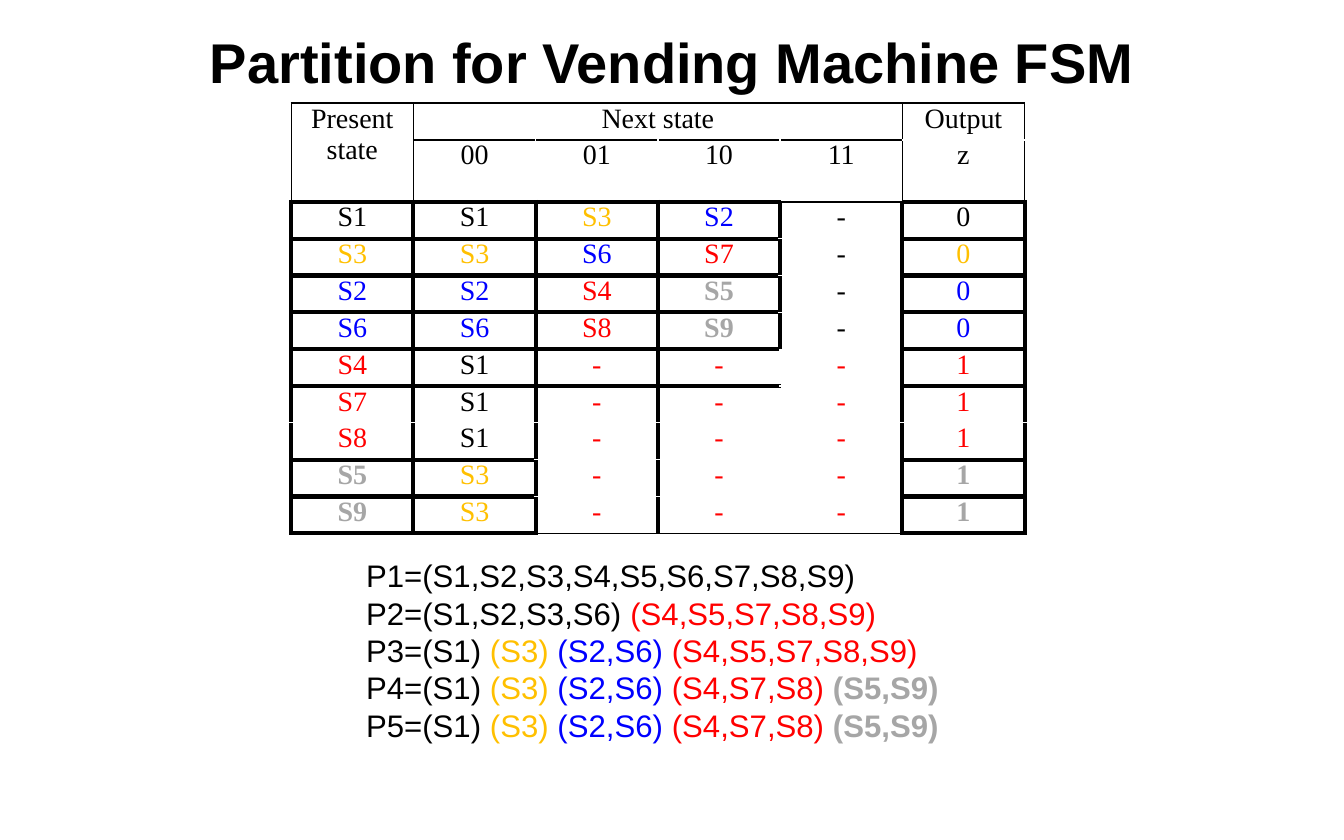
from dataclasses import dataclass

from lxml.etree import SubElement
from pptx import Presentation
from pptx.dml.color import RGBColor
from pptx.enum.text import MSO_ANCHOR, MSO_AUTO_SIZE, PP_ALIGN
from pptx.oxml.ns import qn
from pptx.util import Inches, Pt

BLACK = RGBColor(0x00, 0x00, 0x00)
WHITE = RGBColor(0xFF, 0xFF, 0xFF)
GOLD = RGBColor(0xFF, 0xC0, 0x00)
BLUE = RGBColor(0x00, 0x00, 0xFF)
RED = RGBColor(0xFF, 0x00, 0x00)
GREY = RGBColor(0xA6, 0xA6, 0xA6)

STATE_COLORS = {
    "S1": BLACK, "S3": GOLD, "S2": BLUE, "S6": BLUE, "S4": RED,
    "S7": RED, "S8": RED, "S5": GREY, "S9": GREY,
}


@dataclass(frozen=True)
class Border:
    color: RGBColor
    width: float


@dataclass(frozen=True)
class Transition:
    present: str
    next_states: tuple
    output: str


BORDERS = {"K": Border(BLACK, 3), "k": Border(BLACK, 1), "w": Border(WHITE, 1)}
HORIZONTAL_EDGES = (
    ["kkkkkk", "wkkkkw", "KKKKkK"] + ["KKKKwK"] * 5
    + ["wwwwww", "KKwwwK", "KKwwwK", "KKkkkK"]
)
VERTICAL_EDGES = ["kkwwwkk"] * 2 + ["KKKKKKK"] * 4 + ["KKKKwKK"] * 5

TRANSITIONS = [
    Transition("S1", ("S1", "S3", "S2", "-"), "0"),
    Transition("S3", ("S3", "S6", "S7", "-"), "0"),
    Transition("S2", ("S2", "S4", "S5", "-"), "0"),
    Transition("S6", ("S6", "S8", "S9", "-"), "0"),
    Transition("S4", ("S1", "-", "-", "-"), "1"),
    Transition("S7", ("S1", "-", "-", "-"), "1"),
    Transition("S8", ("S1", "-", "-", "-"), "1"),
    Transition("S5", ("S3", "-", "-", "-"), "1"),
    Transition("S9", ("S3", "-", "-", "-"), "1"),
]
HEADERS = [
    (0, 0, "Present state"), (0, 1, "Next state"), (0, 5, "Output"),
    (1, 1, "00"), (1, 2, "01"), (1, 3, "10"), (1, 4, "11"), (1, 5, "z"),
]
PARTITIONS = [
    ("P1", ["S1,S2,S3,S4,S5,S6,S7,S8,S9"]),
    ("P2", ["S1,S2,S3,S6", "S4,S5,S7,S8,S9"]),
    ("P3", ["S1", "S3", "S2,S6", "S4,S5,S7,S8,S9"]),
    ("P4", ["S1", "S3", "S2,S6", "S4,S7,S8", "S5,S9"]),
    ("P5", ["S1", "S3", "S2,S6", "S4,S7,S8", "S5,S9"]),
]


def add_title(slide) -> None:
    title = slide.shapes.title
    title.left, title.top = Inches(1), Inches(0.17)
    title.width, title.height = Inches(10), Inches(0.75)
    title.text_frame.text = "Partition for Vending Machine FSM"
    title.text_frame.vertical_anchor = MSO_ANCHOR.MIDDLE
    paragraph = title.text_frame.paragraphs[0]
    paragraph.alignment = PP_ALIGN.CENTER
    font = paragraph.font
    font.name, font.size, font.bold = "Arial", Pt(36), True
    font.color.rgb = BLACK


def write_cell(cell, text: str, color: RGBColor) -> None:
    cell.text = text
    paragraph = cell.text_frame.paragraphs[0]
    paragraph.alignment = PP_ALIGN.CENTER
    font = paragraph.font
    font.name, font.size, font.bold = "Times New Roman", Pt(18), color == GREY
    font.color.rgb = color


def format_cell(cell, row: int, column: int) -> None:
    cell.margin_left = cell.margin_right = cell.margin_top = cell.margin_bottom = 0
    bottom = row + (cell.span_height if cell.is_merge_origin else 1)
    right = column + (cell.span_width if cell.is_merge_origin else 1)
    edges = {
        "a:lnL": VERTICAL_EDGES[row][column],
        "a:lnR": VERTICAL_EDGES[row][right],
        "a:lnT": HORIZONTAL_EDGES[row][column],
        "a:lnB": HORIZONTAL_EDGES[bottom][column],
    }
    properties = cell._tc.get_or_add_tcPr()
    for tag, code in edges.items():
        border = BORDERS[code]
        line = SubElement(properties, qn(tag), w=str(Pt(border.width)))
        fill = SubElement(line, qn("a:solidFill"))
        SubElement(fill, qn("a:srgbClr"), val=str(border.color))
    cell.fill.background()


def add_state_table(slide) -> None:
    rows, columns = len(VERTICAL_EDGES), len(HORIZONTAL_EDGES[0])
    frame = slide.shapes.add_table(
        rows, columns, Inches(2.6), Inches(0.92), Inches(6.55), Inches(3.62)
    )
    table = frame.table
    table.first_row = table.horz_banding = False
    table.cell(0, 0).merge(table.cell(1, 0))
    table.cell(0, 1).merge(table.cell(0, 4))
    for row, column, text in HEADERS:
        write_cell(table.cell(row, column), text, BLACK)
    for row, transition in enumerate(TRANSITIONS, start=2):
        present_color = STATE_COLORS[transition.present]
        dash_color = RED if transition.output == "1" else BLACK
        write_cell(table.cell(row, 0), transition.present, present_color)
        for column, state in enumerate(transition.next_states, start=1):
            write_cell(table.cell(row, column), state, STATE_COLORS.get(state, dash_color))
        write_cell(table.cell(row, 5), transition.output, present_color)
    for row in range(rows):
        for column in range(columns):
            format_cell(table.cell(row, column), row, column)


def add_run(paragraph, text: str, color: RGBColor) -> None:
    run = paragraph.add_run()
    run.text = text
    run.font.color.rgb = color
    run.font.bold = color == GREY


def add_partitions(slide) -> None:
    box = slide.shapes.add_textbox(Inches(3.17), Inches(4.92), Inches(5.35), Inches(1.78))
    text_frame = box.text_frame
    text_frame.word_wrap = False
    text_frame.auto_size = MSO_AUTO_SIZE.SHAPE_TO_FIT_TEXT
    for index, (name, groups) in enumerate(PARTITIONS):
        paragraph = text_frame.add_paragraph() if index else text_frame.paragraphs[0]
        paragraph.font.name, paragraph.font.size = "Arial", Pt(20)
        for position, group in enumerate(groups):
            prefix = " " if position else f"{name}="
            add_run(paragraph, f"{prefix}({group})", STATE_COLORS[group[:2]])


def main() -> None:
    presentation = Presentation()
    presentation.slide_width, presentation.slide_height = Inches(12), Inches(7.5)
    slide = presentation.slides.add_slide(presentation.slide_layouts[5])
    add_state_table(slide)
    add_partitions(slide)
    add_title(slide)
    presentation.save("out.pptx")


if __name__ == "__main__":
    main()
